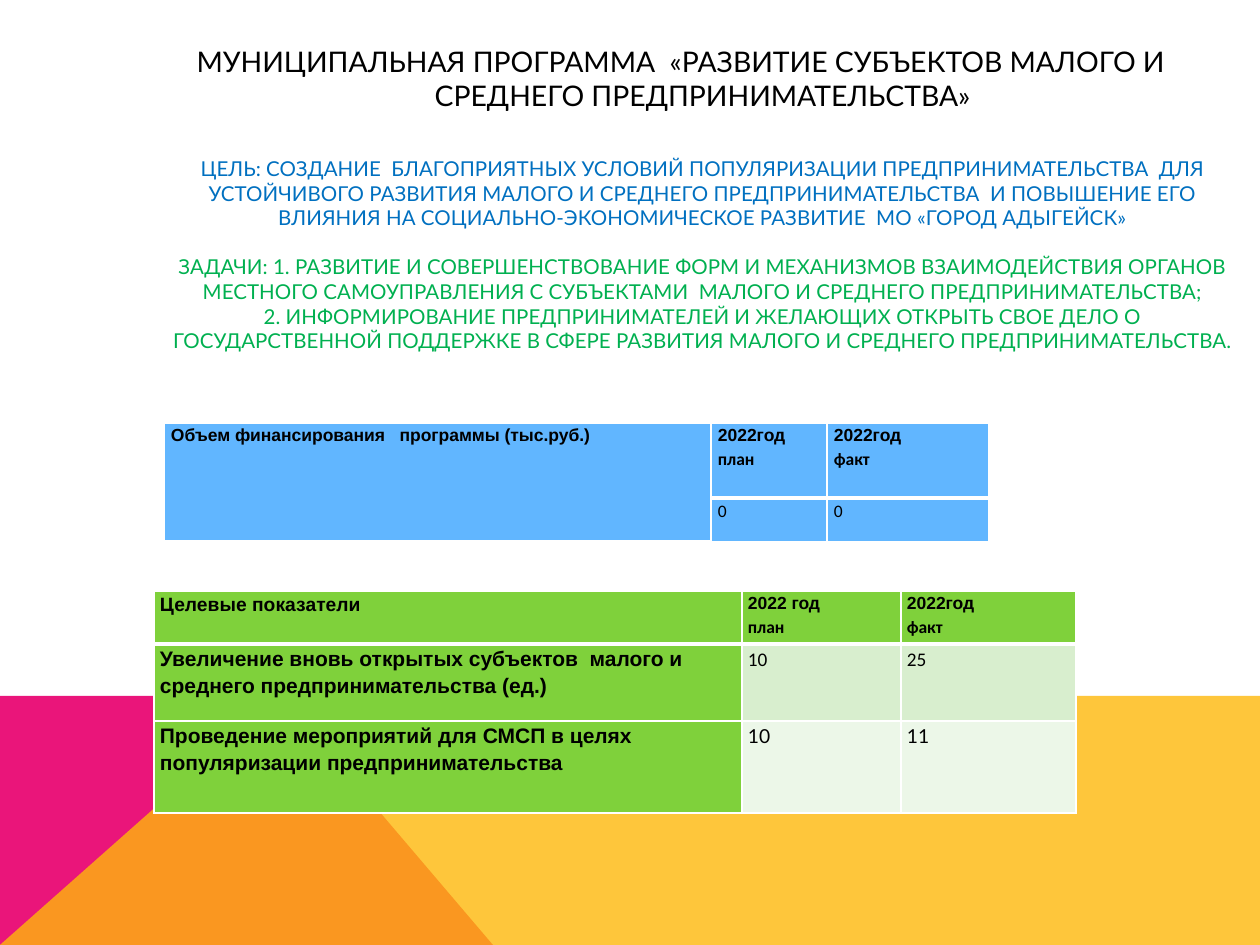
"""Slide on a municipal programme: goal, tasks, financing and target indicators."""
from lxml import etree
from pptx import Presentation
from pptx.dml.color import RGBColor
from pptx.enum.text import MSO_ANCHOR, MSO_AUTO_SIZE, PP_ALIGN
from pptx.oxml.ns import qn
from pptx.util import Emu, Pt

SCALE = 914400 / 126
CENTER = PP_ALIGN.CENTER
MIDDLE = MSO_ANCHOR.MIDDLE
NO_AUTOFIT = MSO_AUTO_SIZE.NONE

BLACK = RGBColor(0x00, 0x00, 0x00)
BLUE = RGBColor(0x00, 0x70, 0xC0)
GREEN = RGBColor(0x00, 0xB0, 0x50)
MAGENTA = RGBColor(0xEA, 0x15, 0x7A)
AMBER = RGBColor(0xFE, 0xB8, 0x0A)
SKY = RGBColor(0x61, 0xB6, 0xFF)
LIME = RGBColor(0x7F, 0xD1, 0x3B)
MINT = RGBColor(0xD8, 0xEE, 0xCE)
PALE_MINT = RGBColor(0xEC, 0xF7, 0xE8)


def px(length):
    return Emu(round(length * SCALE))


def add_grid(page, left, top, widths, heights, inset, rows):
    frame = page.shapes.add_table(len(heights), len(widths), px(left), px(top),
                                  px(sum(widths)), px(sum(heights)))
    table = frame.table
    table.first_row = table.horz_banding = False
    for column, width in zip(table.columns, widths):
        column.width = px(width)
    for row, height in zip(table.rows, heights):
        row.height = px(height)
    for row_index, row in enumerate(rows):
        for column_index, (fill, lines) in enumerate(row):
            cell = table.cell(row_index, column_index)
            cell.margin_left = cell.margin_right = px(inset)
            cell.margin_top = cell.margin_bottom = 0
            cell.fill.solid()
            cell.fill.fore_color.rgb = fill
            cell.text_frame.text = "\n".join(line[0] for line in lines)
            for para, (text, font, size, bold) in zip(cell.text_frame.paragraphs, lines):
                para.line_spacing = 1.15
                para.font.size = Pt(size)
                for span in para.runs:
                    span.font.name = font
                    span.font.size = Pt(size)
                    span.font.bold = bold
                    span.font.color.rgb = BLACK
            properties = cell._tc.get_or_add_tcPr()
            thick_side = {0: "lnB", 1: "lnT"}.get(row_index)
            for position, side in enumerate(("lnL", "lnR", "lnT", "lnB")):
                border = etree.Element(qn(f"a:{side}"))
                border.set("w", str(Pt(3 if side == thick_side else 1)))
                solid = etree.SubElement(border, qn("a:solidFill"))
                etree.SubElement(solid, qn("a:srgbClr")).set("val", "FFFFFF")
                properties.insert(position, border)
    return table


deck = Presentation()
deck.slide_width = px(1260)
deck.slide_height = px(945)
page = deck.slides.add_slide(deck.slide_layouts[5])

bands = [
    (MAGENTA, 100, [(0, 945), (0, 696), (281, 696), (493, 945)]),
    (AMBER, 80, [(0, 945), (281, 696), (1260, 696), (1260, 945)]),
]
for color, opacity, points in bands:
    builder = page.shapes.build_freeform(*points[0], scale=SCALE)
    builder.add_line_segments(points[1:], close=True)
    band = builder.convert_to_shape()
    band.shadow.inherit = False
    band.line.fill.background()
    band.fill.solid()
    band.fill.fore_color.rgb = color
    if opacity < 100:
        tint = band._element.spPr.find(qn("a:solidFill"))[0]
        etree.SubElement(tint, qn("a:alpha")).set("val", str(opacity * 1000))

title_lines = [
    ("МУНИЦИПАЛЬНАЯ ПРОГРАММА  «РАЗВИТИЕ СУБЪЕКТОВ МАЛОГО И СРЕДНЕГО "
     "ПРЕДПРИНИМАТЕЛЬСТВА»", 16.2, BLACK, 0, -44),
    ("ЦЕЛЬ: СОЗДАНИЕ  БЛАГОПРИЯТНЫХ УСЛОВИЙ ПОПУЛЯРИЗАЦИИ ПРЕДПРИНИМАТЕЛЬСТВА  ДЛЯ "
     "УСТОЙЧИВОГО РАЗВИТИЯ МАЛОГО И СРЕДНЕГО ПРЕДПРИНИМАТЕЛЬСТВА  И ПОВЫШЕНИЕ ЕГО "
     "ВЛИЯНИЯ НА СОЦИАЛЬНО-ЭКОНОМИЧЕСКОЕ РАЗВИТИЕ  МО «ГОРОД АДЫГЕЙСК»",
     11.7, BLUE, 25, 0),
    ("ЗАДАЧИ: 1. РАЗВИТИЕ И СОВЕРШЕНСТВОВАНИЕ ФОРМ И МЕХАНИЗМОВ ВЗАИМОДЕЙСТВИЯ ОРГАНОВ "
     "МЕСТНОГО САМОУПРАВЛЕНИЯ С СУБЪЕКТАМИ  МАЛОГО И СРЕДНЕГО ПРЕДПРИНИМАТЕЛЬСТВА;",
     11.7, GREEN, 14, 0),
    ("2. ИНФОРМИРОВАНИЕ ПРЕДПРИНИМАТЕЛЕЙ И ЖЕЛАЮЩИХ ОТКРЫТЬ СВОЕ ДЕЛО О "
     "ГОСУДАРСТВЕННОЙ ПОДДЕРЖКЕ В СФЕРЕ РАЗВИТИЯ МАЛОГО И СРЕДНЕГО "
     "ПРЕДПРИНИМАТЕЛЬСТВА.", 11.7, GREEN, 0, 0),
]
title = page.shapes.title
title.left, title.top, title.width, title.height = px(115), px(55), px(1131), px(287)
title_frame = title.text_frame
title_frame.word_wrap = True
title_frame.auto_size = NO_AUTOFIT
title_frame.vertical_anchor = MIDDLE
title_frame.text = "\n".join(line[0] for line in title_lines)
for para, (text, size, color, gap, indent) in zip(title_frame.paragraphs, title_lines):
    para.alignment = CENTER
    para.space_before = Pt(gap)
    para._p.get_or_add_pPr().set("marL", str(px(44)))
    para._p.get_or_add_pPr().set("indent", str(px(indent)))
    for span in para.runs:
        span.font.name = "Lato"
        span.font.size = Pt(size)
        span.font.color.rgb = color

plan = ("план", "Calibri", 10, True)
fact = ("факт", "Calibri", 10, True)
year = ("2022год", "Arial", 10, True)
zero = (SKY, [("0", "Calibri", 10, False)])
financing = add_grid(page, 164, 423, [547, 116, 162], [75, 44], 7, [
    [(SKY, [("Объем финансирования   программы (тыс.руб.)", "Arial", 10, True)]),
     (SKY, [year, plan]), (SKY, [year, fact])],
    [(SKY, []), zero, zero],
])
financing.cell(0, 0).merge(financing.cell(1, 0))

add_grid(page, 154, 591, [588, 159, 175], [53, 77, 92], 6, [
    [(LIME, [("Целевые показатели", "Arial", 11, True)]),
     (LIME, [("2022 год", "Arial", 10, True), plan]), (LIME, [year, fact])],
    [(LIME, [("Увеличение вновь открытых субъектов  малого и среднего "
              "предпринимательства (ед.)", "Arial", 12, True)]),
     (MINT, [("10", "Calibri", 11, False)]), (MINT, [("25", "Calibri", 11, False)])],
    [(LIME, [("Проведение мероприятий для СМСП в целях популяризации "
              "предпринимательства", "Arial", 12, True)]),
     (PALE_MINT, [("10", "Lato", 11, False)]), (PALE_MINT, [("11", "Lato", 11, False)])],
])

deck.save("out.pptx")
